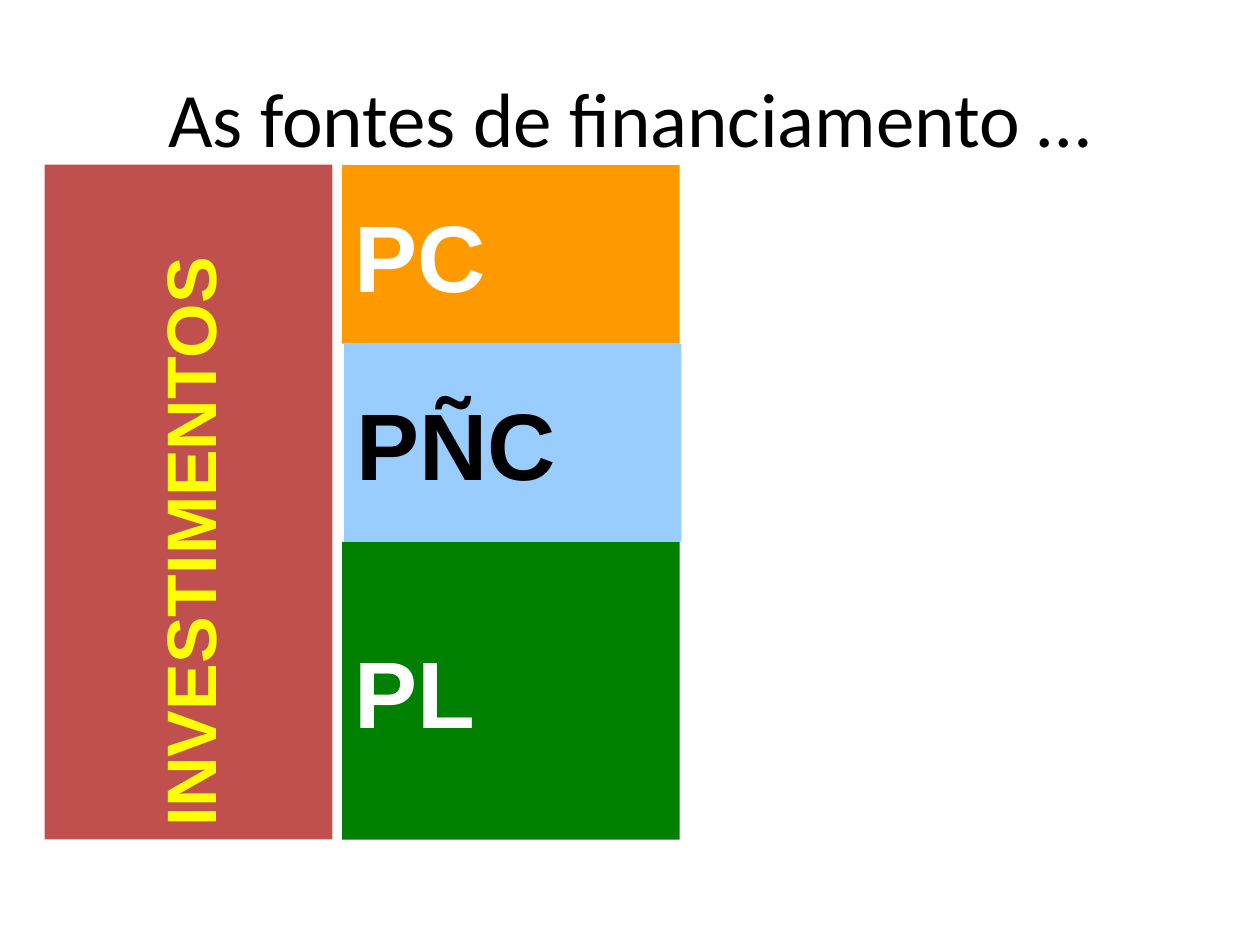
"""Build a slide of investments beside their sources of financing."""
from dataclasses import dataclass

from pptx import Presentation
from pptx.dml.color import RGBColor
from pptx.enum.shapes import MSO_SHAPE
from pptx.enum.text import MSO_ANCHOR, PP_ALIGN
from pptx.util import Cm, Pt


@dataclass(frozen=True)
class Theme:
    title_font: str = "Calibri"
    block_font: str = "Arial"
    title_size: int = 44
    asset_size: int = 40
    source_size: int = 54
    black: str = "000000"
    white: str = "FFFFFF"
    yellow: str = "FFFF00"
    red: str = "C0504D"
    orange: str = "FF9900"
    blue: str = "99CCFF"
    green: str = "008000"


THEME = Theme()


def set_text(sp, text, color, align, **font):
    tf = sp.text_frame
    for name, value in {"word_wrap": True, "vertical_anchor": MSO_ANCHOR.MIDDLE}.items():
        setattr(tf, name, value)
    p = tf.paragraphs[0]
    p.alignment = align
    r = p.add_run()
    r.text = text
    for name, value in font.items():
        setattr(r.font, name, value)
    r.font.color.rgb = RGBColor.from_string(color)


def add_title(s, text):
    sp = s.shapes.add_textbox(Cm(1.27), Cm(0.76), Cm(22.86), Cm(3.18))
    set_text(sp, text, THEME.black, PP_ALIGN.CENTER,
             name=THEME.title_font, size=Pt(THEME.title_size))


def add_block(s, text, box, fill, color, size, rotation=0):
    sp = s.shapes.add_shape(MSO_SHAPE.RECTANGLE, *map(Cm, box))
    sp.shadow.inherit = False
    sp.rotation = rotation
    sp.fill.solid()
    sp.fill.fore_color.rgb = RGBColor.from_string(fill)
    sp.line.fill.background()
    set_text(sp, text, color, PP_ALIGN.LEFT,
             name=THEME.block_font, size=Pt(size), bold=True)


def add_sources(s, left, top, width, sources):
    for text, height, shift, fill, color in sources:
        add_block(s, text, (left + shift, top, width, height),
                  fill, color, THEME.source_size)
        top += height


def main():
    prs = Presentation()
    prs.slide_width, prs.slide_height = Cm(25.4), Cm(19.05)
    s = prs.slides.add_slide(prs.slide_layouts[6])
    add_title(s, "As fontes de financiamento …")
    add_block(s, "INVESTIMENTOS", (-3, 7.22, 13.6, 5.8),
              THEME.red, THEME.yellow, THEME.asset_size, rotation=270)
    add_sources(s, 6.9, 3.33, 6.8, [
        ("PC", 3.6, 0, THEME.orange, THEME.white),
        ("PÑC", 4, 0.04, THEME.blue, THEME.black),
        ("PL", 6, 0, THEME.green, THEME.white),
    ])
    prs.save("out.pptx")


if __name__ == "__main__":
    main()
